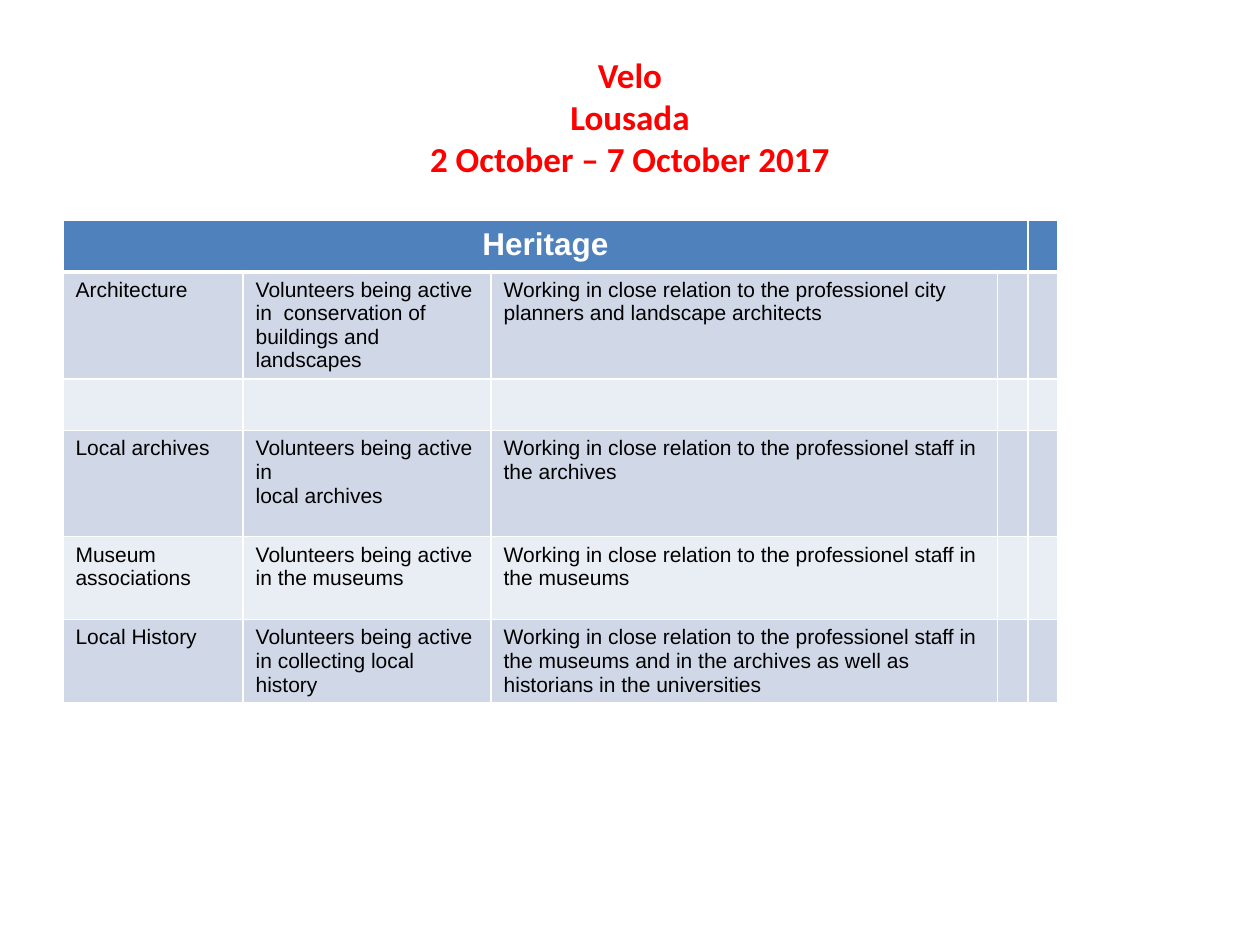
from lxml import etree
from pptx import Presentation
from pptx import util as u
from pptx.dml import color
from pptx.enum import text
from pptx.oxml import ns

COLOURS = {"title": "FF0000", "header": "4F81BD", "header_text": "FFFFFF",
           "body_text": "000000", "odd": "D0D8E8", "even": "E9EDF4",
           "border": "FFFFFF"}
TITLE_FONT = {"name": "Calibri", "size": u.Pt(20), "bold": True}
HEADER_FONT = {"name": "Arial", "size": u.Pt(18), "bold": True}
BODY_FONT = {"name": "Arial", "size": u.Pt(12), "bold": False}
COLUMN_WIDTHS = [3.63, 5, 10.21, 0.61, 0.61]
ROW_HEIGHTS = [1.02, 2.16, 1.04, 2.14, 1.67, 1.67]
RELATION = "Working in close relation to the professionel "
ROWS = [
    ["Heritage"],
    ["Architecture",
     "Volunteers being active in  conservation of buildings and landscapes",
     RELATION + "city planners and landscape architects"],
    [],
    ["Local archives", "Volunteers being active in\nlocal archives",
     RELATION + "staff in the archives"],
    ["Museum associations", "Volunteers being active in the museums",
     RELATION + "staff in the museums"],
    ["Local History", "Volunteers being active in collecting local history",
     RELATION + "staff in the museums and in the archives as well as "
     "historians in the universities"],
]


def rgb(name):
    """Return the named colour."""
    return color.RGBColor.from_string(COLOURS[name])


def write(frame, words, font, colour, alignment):
    """Fill a text frame and format each paragraph."""
    frame.text = words
    for paragraph in frame.paragraphs:
        paragraph.alignment = alignment
        for run in paragraph.runs:
            for key, value in font.items():
                setattr(run.font, key, value)
            run.font.color.rgb = rgb(colour)


def set_borders(cell, widths):
    """Draw the cell borders, with widths in points by side."""
    properties = cell._tc.get_or_add_tcPr()
    for side, width in widths.items():
        line = etree.SubElement(properties, ns.qn(f"a:ln{side}"),
                                w=str(u.Pt(width)))
        fill = etree.SubElement(line, ns.qn("a:solidFill"))
        etree.SubElement(fill, ns.qn("a:srgbClr"), val=COLOURS["border"])


def place_title(slide, left, top, width, height):
    """Place the three-line title in its box."""
    title = slide.shapes.title
    box = {"left": left, "top": top, "width": width, "height": height}
    for key, value in box.items():
        setattr(title, key, u.Cm(value))
    title.text_frame.vertical_anchor = text.MSO_ANCHOR.MIDDLE
    write(title.text_frame, "Velo\vLousada\v2 October – 7 October 2017",
          TITLE_FONT, "title", text.PP_ALIGN.CENTER)


def place_table(slide, left, top):
    """Place the heritage table with its corner at the given point."""
    table = slide.shapes.add_table(
        len(ROWS), len(COLUMN_WIDTHS), u.Cm(left), u.Cm(top),
        u.Cm(sum(COLUMN_WIDTHS)), u.Cm(sum(ROW_HEIGHTS))).table
    for column, width in zip(table.columns, COLUMN_WIDTHS):
        column.width = u.Cm(width)
    for index, (row, height, words) in enumerate(
            zip(table.rows, ROW_HEIGHTS, ROWS)):
        row.height = u.Cm(height)
        header = index == 0
        fill = "header" if header else "odd" if index % 2 else "even"
        borders = {"L": 1, "R": 1, "T": 3 if index == 1 else 1,
                   "B": 3 if header else 1}
        for position, cell in enumerate(row.cells):
            set_borders(cell, borders)
            cell.fill.solid()
            cell.fill.fore_color.rgb = rgb(fill)
            if position < len(words):
                write(cell.text_frame, words[position],
                      HEADER_FONT if header else BODY_FONT,
                      "header_text" if header else "body_text",
                      text.PP_ALIGN.CENTER if header else text.PP_ALIGN.LEFT)
    table.cell(0, 0).merge(table.cell(0, 3))


def main():
    """Build the slide and save it."""
    presentation = Presentation()
    presentation.slide_width = u.Cm(25.4)
    presentation.slide_height = u.Cm(19.05)
    slide = presentation.slides.add_slide(presentation.slide_layouts[5])
    place_title(slide, 1.27, 0.76, 22.86, 3.18)
    place_table(slide, 1.27, 4.45)
    presentation.save("out.pptx")


if __name__ == "__main__":
    main()
